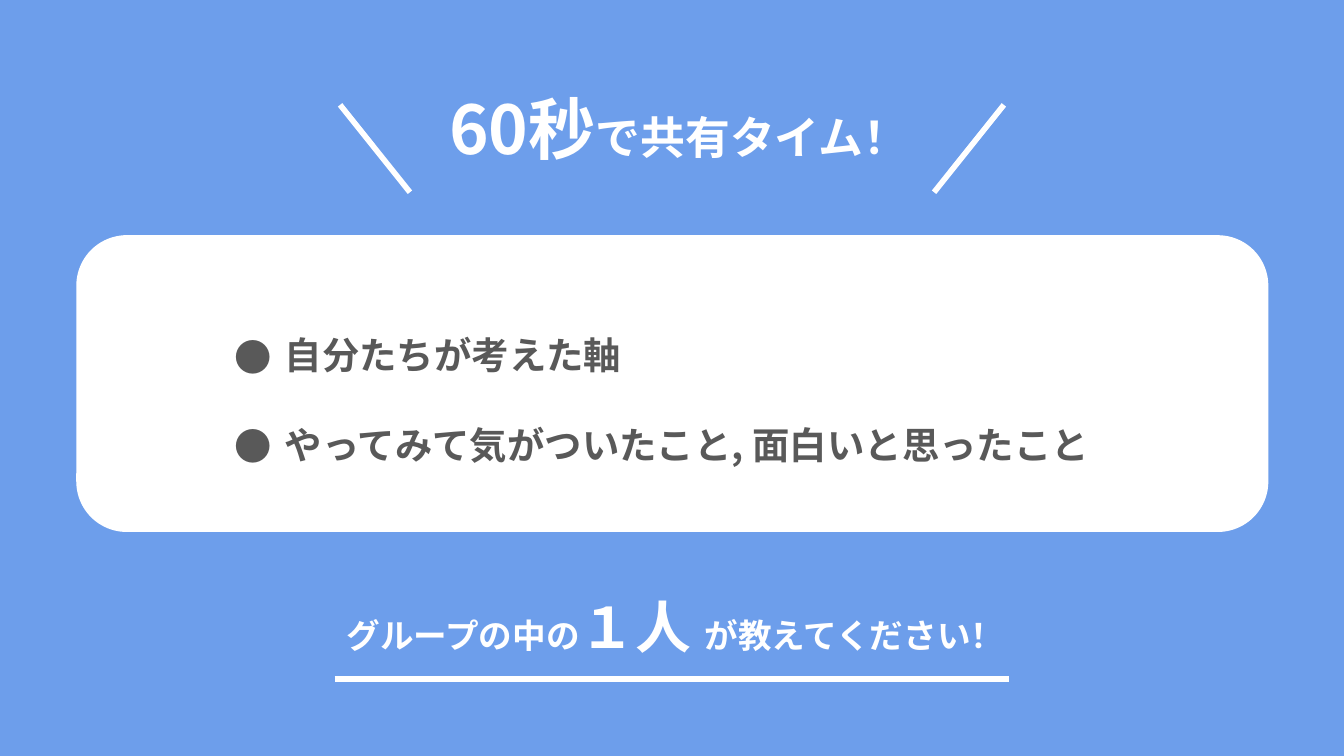
"""Build the slide that opens a 60-second sharing time."""
import pptx
import pptx.dml.color
import pptx.enum.shapes
import pptx.enum.text
import pptx.oxml
import pptx.oxml.ns
import pptx.util

Pt = pptx.util.Pt
FONT = "Noto Sans CJK JP"
WIDTH, HEIGHT = 720, 405
BLUE, WHITE, GRAY = "6D9EEB", "FFFFFF", "595959"


def rgb(color):
    """Turn a hex string into a colour."""
    return pptx.dml.color.RGBColor.from_string(color)


def add_child(parent, tag, **attributes):
    """Append a DrawingML element to its parent."""
    child = pptx.oxml.parse_xml(f"<{tag} {pptx.oxml.ns.nsdecls('a')}/>")
    for key, value in attributes.items():
        child.set(key, value)
    parent.append(child)
    return child


def add_run(paragraph, text, size, color):
    """Add one bold run in the slide font."""
    run = paragraph.add_run()
    run.text = text
    run.font.name = FONT
    run.font.size = Pt(size)
    run.font.bold = True
    run.font.color.rgb = rgb(color)
    add_child(run.font._element, "a:ea", typeface=FONT)


def set_frame(shape, left, top, width, height):
    """Place a text shape and return its frame, set to wrap from the top."""
    shape.left, shape.top = Pt(left), Pt(top)
    shape.width, shape.height = Pt(width), Pt(height)
    frame = shape.text_frame
    frame.word_wrap = True
    frame.auto_size = pptx.enum.text.MSO_AUTO_SIZE.SHAPE_TO_FIT_TEXT
    frame.vertical_anchor = pptx.enum.text.MSO_ANCHOR.TOP
    frame.margin_left = frame.margin_right = Pt(7.2)
    frame.margin_top = frame.margin_bottom = Pt(7.2)
    return frame


def add_line(shapes, x1, y1, x2, y2):
    """Draw a white line without a shadow."""
    line = shapes.add_connector(
        pptx.enum.shapes.MSO_CONNECTOR.STRAIGHT, Pt(x1), Pt(y1), Pt(x2), Pt(y2))
    line.line.color.rgb = rgb(WHITE)
    line.line.width = Pt(3)
    add_child(line._element.spPr, "a:effectLst")


def add_card(shapes, left, top, width, height):
    """Draw the white rounded card behind the list."""
    card = shapes.add_shape(
        pptx.enum.shapes.MSO_SHAPE.ROUNDED_RECTANGLE,
        Pt(left), Pt(top), Pt(width), Pt(height))
    card.adjustments[0] = 0.17
    card.shadow.inherit = False
    card.fill.solid()
    card.fill.fore_color.rgb = rgb(WHITE)
    card.line.fill.background()
    return card


def fill_list(frame, items):
    """Write the topics as a bulleted list."""
    for index, topic in enumerate(items):
        paragraph = frame.add_paragraph() if index else frame.paragraphs[0]
        paragraph.line_spacing = 2.0
        paragraph.space_before = Pt(0)
        add_run(paragraph, topic, 20, GRAY)
        properties = paragraph._p.get_or_add_pPr()
        properties.set("marL", str(Pt(36)))
        properties.set("indent", str(-Pt(27)))
        add_child(add_child(properties, "a:buClr"), "a:srgbClr", val=GRAY)
        add_child(properties, "a:buFont", typeface=FONT)
        add_child(properties, "a:buChar", char="●")


def add_request(shapes):
    """Add the underlined request below the card."""
    group = shapes.add_group_shape().shapes
    request = group.add_textbox(0, 0, Pt(1), Pt(1))
    paragraph = set_frame(request, 178.6, 304.6, 371.5, 56.2).paragraphs[0]
    paragraph.line_spacing = 1.15
    for text, size in (("グループの中の", 18), ("１人 ", 30), ("が教えてください！", 18)):
        add_run(paragraph, text, size, WHITE)
    add_line(group, 179.3, 363.6, WIDTH - 179.3, 363.6)


def main():
    """Build and save the slide."""
    deck = pptx.Presentation()
    deck.slide_width, deck.slide_height = Pt(WIDTH), Pt(HEIGHT)
    slide = deck.slides.add_slide(deck.slide_layouts[1])
    slide.background.fill.solid()
    slide.background.fill.fore_color.rgb = rgb(BLUE)

    heading = set_frame(slide.shapes.title, 213.8, 39.6, 291.6, 58.3).paragraphs[0]
    heading.alignment = pptx.enum.text.PP_ALIGN.CENTER
    add_run(heading, " 60秒", 36, WHITE)
    add_run(heading, "で共有タイム！", 24, WHITE)
    for outer, inner in ((182.2, 219.6), (WIDTH - 182.2, WIDTH - 219.6)):
        add_line(slide.shapes, outer, 56.2, inner, 103)

    card = add_card(slide.shapes, 40.9, 126, 638.6, 159)
    topics = slide.placeholders[1]
    fill_list(set_frame(topics, 109.4, 146.9, 501.1, 111.6),
              ("自分たちが考えた軸", "やってみて気がついたこと, 面白いと思ったこと"))
    card._element.addnext(topics._element)
    add_request(slide.shapes)
    deck.save("out.pptx")


if __name__ == "__main__":
    main()
